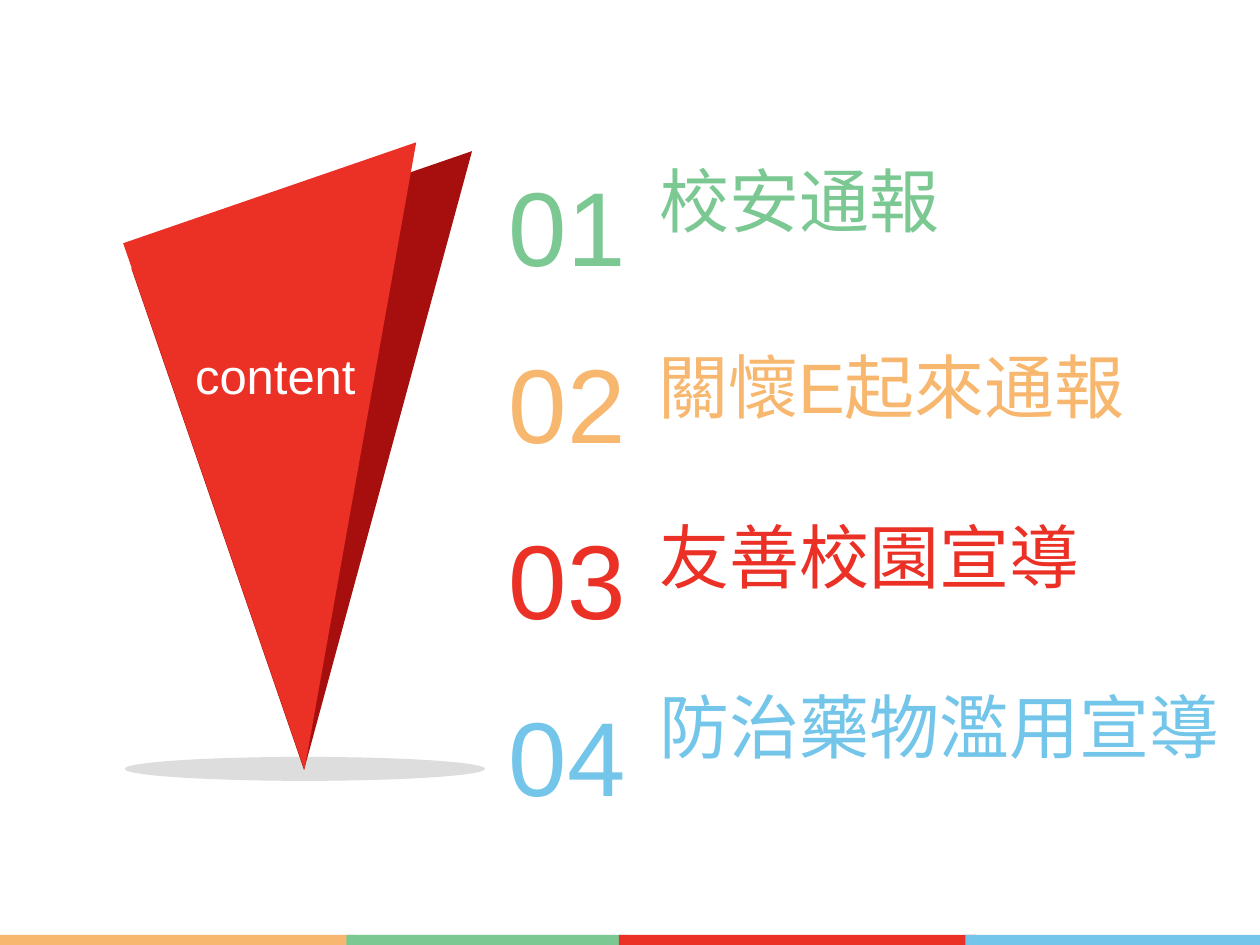
from pptx import Presentation
from pptx.dml.color import RGBColor
from pptx.enum.shapes import MSO_SHAPE
from pptx.enum.text import MSO_ANCHOR
from pptx.util import Pt

ORANGE, GREEN, RED, BLUE = "F7B76F", "7BC893", "EB3025", "73C6E9"
DARK_RED, GREY, WHITE = "A70F0F", "DDDDDD", "FFFFFF"


def add_filled(kind, left, top, width, height, color):
    shape = slide.shapes.add_shape(kind, Pt(left), Pt(top), Pt(width), Pt(height))
    shape.shadow.inherit = False
    shape.fill.solid()
    shape.fill.fore_color.rgb = RGBColor.from_string(color)
    shape.line.fill.background()
    return shape


def add_text(text, left, top, width, height, size, color, margin_top=3.6, line_spacing=1.0):
    box = slide.shapes.add_textbox(Pt(left), Pt(top), Pt(width), Pt(height))
    text_frame = box.text_frame
    text_frame.text = text
    text_frame.word_wrap = True
    text_frame.vertical_anchor = MSO_ANCHOR.TOP
    text_frame.margin_top = Pt(margin_top)
    paragraph = text_frame.paragraphs[0]
    paragraph.line_spacing = line_spacing
    font = paragraph.runs[0].font
    font.name = "Arial"
    font.size = Pt(size)
    font.color.rgb = RGBColor.from_string(color)


presentation = Presentation()
presentation.slide_width, presentation.slide_height = Pt(720), Pt(540)
slide = presentation.slides.add_slide(presentation.slide_layouts[6])

# Footer stripe: each band slightly overlaps the one before
for left, width, color in [
    (0, 203.8, ORANGE), (198, 161, GREEN), (353.7, 204.2, RED), (551.7, 168.3, BLUE),
]:
    add_filled(MSO_SHAPE.RECTANGLE, left, 534.2, width, 5.8, color)

# Folded pennant standing on its ground shadow
add_filled(MSO_SHAPE.OVAL, 71.2, 432.5, 206, 13.7, GREY)
for left, top, width, height, color in [
    (118.8, 111.6, 205.9, 303.1, DARK_RED),
    (117.4, 101.5, 177.1, 318.2, RED),
]:
    triangle = add_filled(MSO_SHAPE.RIGHT_TRIANGLE, left, top, width, height, color)
    triangle.rotation = 161
    triangle._element.spPr.get_or_add_xfrm().set("flipH", "1")
add_text("content", 104.4, 191.5, 117.4, 41, 28, WHITE, margin_top=6)

# Numbered agenda
agenda = [
    ("校安通報", 370, 92.2, 184, 57.6, GREEN),
    ("關懷E起來通報", 369, 198, 306, 44, ORANGE),
    ("友善校園宣導", 370, 295.2, 257, 50.4, RED),
    ("防治藥物濫用宣導", 370, 392.4, 336, 54, BLUE),
]
for index, (title, left, top, width, height, color) in enumerate(agenda):
    add_text(title, left, top, width, height, 40, color, line_spacing=0.9)
    add_text(f"{index + 1:02}", 283.7, 83.5 + 100.8 * index, 85.7, 79.2, 60, color, margin_top=9)

presentation.save("out.pptx")
